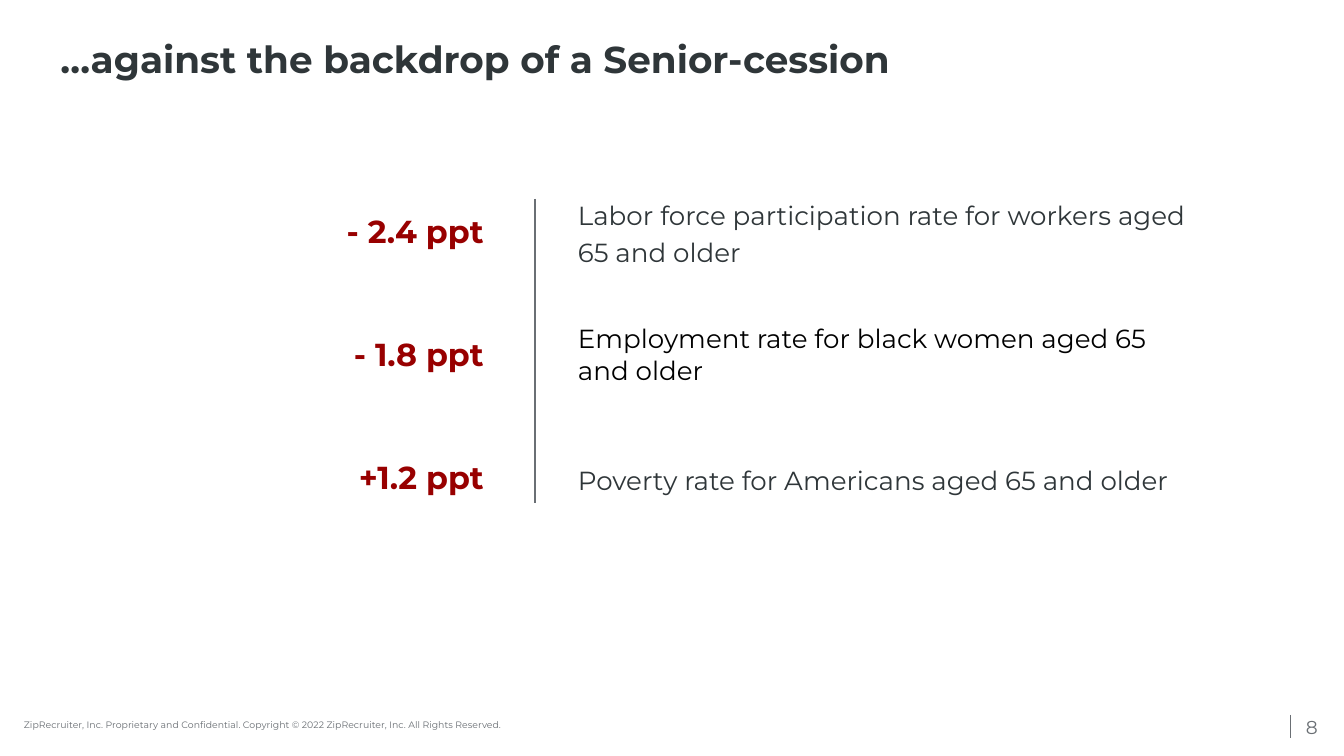
from lxml import etree
from pptx import Presentation
from pptx import util as u
from pptx.dml.color import RGBColor
from pptx.enum import shapes, text
from pptx.oxml import ns

FONT = "Montserrat"
COLORS = {"ink": "2F3639", "gray": "6A6F74", "red": "980000",
          "black": "000000", "white": "FFFFFF"}
ROWS = [
    ("- 2.4 ppt", "Labor force participation rate for workers aged 65 and older", "ink", 1.15, 10),
    ("- 1.8 ppt", "Employment rate for black women aged 65 and older", "black", 1, 0),
    ("+1.2 ppt", "Poverty rate for Americans aged 65 and older", "ink", 1.15, 10),
]


def style(para, size, color, bold=False, align=text.PP_ALIGN.LEFT):
    """Set the font and alignment of a paragraph."""
    para.alignment = align
    font = para.font
    font.name, font.size, font.bold = FONT, u.Pt(size), bold
    font.color.rgb = RGBColor.from_string(COLORS[color])


def inset(frame, gap):
    """Wrap a text frame and give it equal margins."""
    frame.word_wrap = True
    frame.margin_left = frame.margin_right = u.Inches(gap)
    frame.margin_top = frame.margin_bottom = u.Inches(gap)


def add_rule(slide, x, top, end):
    """Draw a thin gray vertical line."""
    line = slide.shapes.add_connector(
        shapes.MSO_CONNECTOR.STRAIGHT,
        u.Inches(x), u.Inches(top), u.Inches(x), u.Inches(end))
    line.line.color.rgb = RGBColor.from_string(COLORS["gray"])
    line.line.width = u.Pt(0.75)
    etree.SubElement(line._element.spPr, ns.qn("a:effectLst"))


def add_label(slide, box, words, size, gap, align=text.PP_ALIGN.LEFT):
    """Add a gray, vertically centered label and return its paragraph."""
    frame = slide.shapes.add_textbox(*map(u.Inches, box)).text_frame
    inset(frame, gap)
    frame.vertical_anchor = text.MSO_ANCHOR.MIDDLE
    para = frame.paragraphs[0]
    para.text = words
    style(para, size, "gray", align=align)
    return para


def add_title(slide, box, words):
    """Place and format the title."""
    title = slide.shapes.title
    title.left, title.top, title.width, title.height = map(u.Inches, box)
    frame = title.text_frame
    inset(frame, 0)
    frame.vertical_anchor = text.MSO_ANCHOR.TOP
    frame.text = words
    style(frame.paragraphs[0], 20, "ink", True)


def edge_cell(cell):
    """Give a cell thin white borders and no fill."""
    props = cell._tc.get_or_add_tcPr()
    for side in ("lnL", "lnR", "lnT", "lnB"):
        edge = etree.SubElement(props, ns.qn("a:" + side), w=str(u.Pt(0.75)))
        fill = etree.SubElement(edge, ns.qn("a:solidFill"))
        etree.SubElement(fill, ns.qn("a:srgbClr"), val=COLORS["white"])
    cell.fill.background()


def fill_cell(cell, words, size, color, bold, align):
    """Write one table cell and return its paragraph."""
    cell.vertical_anchor = text.MSO_ANCHOR.MIDDLE
    cell.margin_left = cell.margin_right = u.Inches(0.1)
    cell.margin_top = cell.margin_bottom = u.Inches(0.1)
    edge_cell(cell)
    para = cell.text_frame.paragraphs[0]
    para.text = words
    style(para, size, color, bold, align)
    return para


def add_rates(slide, box):
    """Add the table of rate changes with its dividing rule."""
    left, top, width, height = box
    table = slide.shapes.add_table(len(ROWS), 2, *map(u.Inches, box)).table
    table.first_row = table.horz_banding = False
    table.columns[0].width = u.Inches(2.66)
    table.columns[1].width = u.Inches(width - 2.66)
    for row, (change, label, color, space, after) in enumerate(ROWS):
        table.rows[row].height = u.Inches(height / len(ROWS))
        fill_cell(table.cell(row, 0), change, 17, "red", True, text.PP_ALIGN.RIGHT)
        para = fill_cell(table.cell(row, 1), label, 14, color, False, text.PP_ALIGN.LEFT)
        para.line_spacing = space
        para.space_after = u.Pt(after)
        props = para._p.get_or_add_pPr()
        props.set("marL", str(u.Inches(0.5)))
        props.set("indent", "0")
    add_rule(slide, left + 2.94, top + 0.21, top + 2.47)


def add_footer(slide, box):
    """Add the copyright line and the page number."""
    left, top, width, height = box
    notice = add_label(
        slide, (left, top, 4.93, height),
        "ZipRecruiter, Inc. Proprietary and Confidential. "
        "Copyright © 2022 ZipRecruiter, Inc. All Rights Reserved.", 5, 0.1)
    notice.line_spacing = 1.15
    page = left + width - 0.32
    add_label(slide, (page, top + 0.11, 0.32, 0.28), "8", 10, 0, text.PP_ALIGN.CENTER)
    add_rule(slide, page, top + 0.16, top + 0.33)


def main():
    """Build and save the slide."""
    deck = Presentation()
    deck.slide_width = u.Inches(10)
    deck.slide_height = deck.slide_width * 9 // 16
    slide = deck.slides.add_slide(deck.slide_layouts[5])
    add_footer(slide, (0.08, 5.16, 9.84, 0.46))
    add_title(slide, (0.45, 0.27, 9.09, 0.67), "…against the backdrop of a Senior-cession")
    add_rates(slide, (1.04, 1.27, 7.91, 2.75))
    deck.save("out.pptx")


if __name__ == "__main__":
    main()
